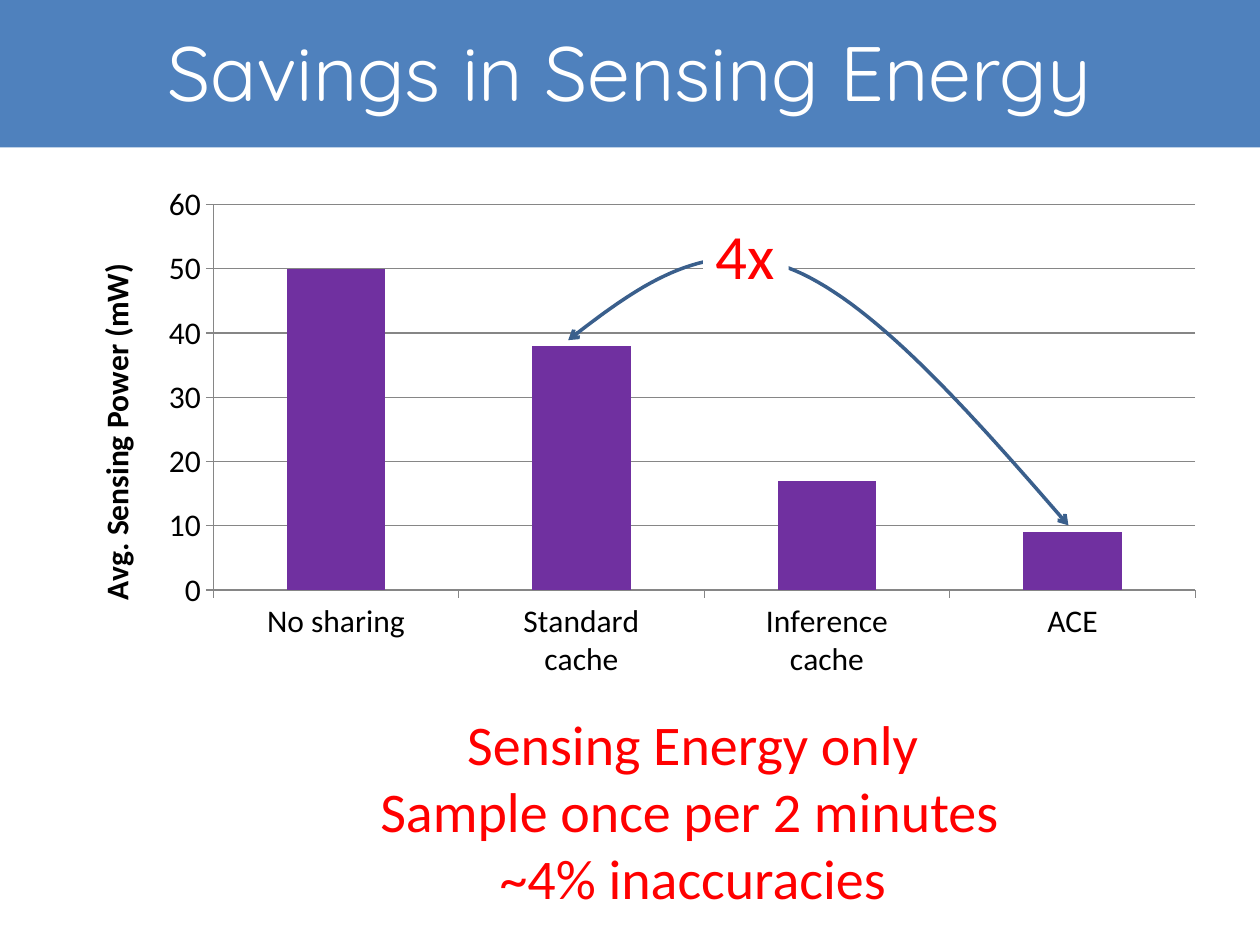
from dataclasses import dataclass

from lxml import etree
from pptx import Presentation
from pptx.chart.data import CategoryChartData
from pptx.dml.color import RGBColor
from pptx.enum.chart import XL_CHART_TYPE, XL_TICK_MARK
from pptx.enum.shapes import MSO_SHAPE
from pptx.enum.text import MSO_ANCHOR, PP_ALIGN
from pptx.oxml import parse_xml
from pptx.oxml.ns import nsdecls, qn
from pptx.util import Inches, Pt


@dataclass(frozen=True)
class Theme:
    """Colours, fonts and type sizes of the slide."""
    band: str = "4F81BD"
    bar: str = "7030A0"
    accent: str = "FF0000"
    arrow: str = "3A5F8C"
    grid: str = "868686"
    white: str = "FFFFFF"
    black: str = "000000"
    head_font: str = "Quicksand"
    body_font: str = "Calibri"
    title: int = 44
    callout: int = 36
    notes: int = 32
    chart: int = 18


def rgb(value):
    """Return a colour from its hex string."""
    return RGBColor.from_string(value)


def box(*lengths):
    """Return lengths given in inches."""
    return [Inches(v) for v in lengths]


def style_font(font, name, size, color, bold=False):
    """Set face, size, colour and weight of a font."""
    font.name, font.size, font.bold = name, Pt(size), bold
    font.color.rgb = rgb(color)


def put_text(tf, lines, font, size, color, aligns=(PP_ALIGN.CENTER,), wrap=False,
             anchor=MSO_ANCHOR.TOP):
    """Write lines into a text frame, cycling through the alignments."""
    tf.word_wrap, tf.vertical_anchor = wrap, anchor
    for i, line in enumerate(lines):
        p = tf.paragraphs[0] if i == 0 else tf.add_paragraph()
        p.alignment = aligns[i % len(aligns)]
        r = p.add_run()
        r.text = line
        style_font(r.font, font, size, color)


def bezier(p0, p1, p2, p3, steps=32):
    """Return points along a cubic curve, without its start."""
    points = []
    for i in range(1, steps + 1):
        t = i / steps
        weights = ((1 - t) ** 3, 3 * t * (1 - t) ** 2, 3 * t * t * (1 - t), t ** 3)
        points.append(tuple(sum(w * p[k] for w, p in zip(weights, (p0, p1, p2, p3)))
                            for k in (0, 1)))
    return points


class SlideBuilder:
    """Holds the theme and the current slide."""

    def __init__(self, prs, theme):
        """Add a title-only slide."""
        self.theme = theme
        self.s = prs.slides.add_slide(prs.slide_layouts[5])

    def rect(self, at, color):
        """Add a plain filled rectangle."""
        sp = self.s.shapes.add_shape(MSO_SHAPE.RECTANGLE, *box(*at))
        sp.shadow.inherit = False
        sp.fill.solid()
        sp.fill.fore_color.rgb = rgb(color)
        sp.line.fill.background()
        return sp

    def band(self, at):
        """Add the title band behind everything else."""
        el = self.rect(at, self.theme.band)._element
        el.getparent().insert(2, el)

    def title(self, text, at):
        """Place and fill the title placeholder."""
        th, sp = self.theme, self.s.shapes.title
        sp.left, sp.top, sp.width, sp.height = box(*at)
        put_text(sp.text_frame, [text], th.head_font, th.title, th.white,
                 wrap=True, anchor=MSO_ANCHOR.MIDDLE)

    def text(self, lines, at, aligns):
        """Add a text box of coloured lines."""
        th = self.theme
        sp = self.s.shapes.add_textbox(*box(*at))
        put_text(sp.text_frame, lines, th.body_font, th.notes, th.accent, aligns)

    def callout(self, text, at):
        """Add a label that masks what lies behind it."""
        th = self.theme
        put_text(self.rect(at, th.white).text_frame, [text], th.body_font,
                 th.callout, th.accent, (PP_ALIGN.LEFT,))

    def curve(self, start, *segments):
        """Add a smooth open line with an arrowhead at both ends."""
        points, pen = [], start
        for segment in segments:
            points += bezier(pen, *segment)
            pen = segment[-1]
        fb = self.s.shapes.build_freeform(*box(*start))
        fb.add_line_segments([box(*p) for p in points], close=False)
        sp = fb.convert_to_shape()
        sp.shadow.inherit = False
        sp.fill.background()
        sp.line.color.rgb, sp.line.width = rgb(self.theme.arrow), Pt(2)
        ln = sp.line._get_or_add_ln()
        for end in ("a:headEnd", "a:tailEnd"):
            etree.SubElement(ln, qn(end), type="arrow")

    def column_chart(self, categories, values, axis_title, at, plot):
        """Add a clustered column chart with a fixed plot area."""
        th = self.theme
        data = CategoryChartData()
        data.categories = categories
        data.add_series("Series 1", values)
        chart = self.s.shapes.add_chart(
            XL_CHART_TYPE.COLUMN_CLUSTERED, *box(*at), data).chart
        chart.has_legend = chart.has_title = False
        style_font(chart.font, th.body_font, th.chart, th.black)
        bars = chart.plots[0]
        bars.gap_width, bars.vary_by_categories = 150, False
        fill = bars.series[0].format.fill
        fill.solid()
        fill.fore_color.rgb = rgb(th.bar)
        axis = chart.value_axis
        axis.minimum_scale, axis.maximum_scale, axis.major_unit = 0, 60, 10
        axis.has_major_gridlines = True
        put_text(axis.axis_title.text_frame, [axis_title], th.body_font, th.chart, th.black)
        axis.axis_title.text_frame.paragraphs[0].runs[0].font.bold = True
        for ax in (axis, chart.category_axis):
            ax.major_tick_mark = XL_TICK_MARK.OUTSIDE
            ax.minor_tick_mark = XL_TICK_MARK.NONE
        for part in (axis, chart.category_axis, axis.major_gridlines):
            part.format.line.color.rgb = rgb(th.grid)
            part.format.line.width = Pt(0.75)
        self.plot_layout(chart, plot)

    def plot_layout(self, chart, plot):
        """Fix the inner plot area as fractions of the chart."""
        area = chart.plots[0]._element.getparent()
        for old in area.findall(qn("c:layout")):
            area.remove(old)
        modes = "".join(f'<c:{k}Mode val="edge"/>' for k in "xy")
        sizes = "".join(f'<c:{k} val="{v}"/>' for k, v in zip("xywh", plot))
        area.insert(0, parse_xml(
            f'<c:layout {nsdecls("c")}><c:manualLayout><c:layoutTarget val="inner"/>'
            f'{modes}{sizes}</c:manualLayout></c:layout>'))


def main():
    """Build and save the slide."""
    prs = Presentation()
    prs.slide_width, prs.slide_height = box(10, 7.5)
    b = SlideBuilder(prs, Theme())
    b.band((0, -0.08, 10, 1.25))
    b.title("Savings in Sensing Energy", (0.5, -0.17, 9, 1.47))
    b.column_chart(["No sharing", "Standard\ncache", "Inference\ncache", "ACE"],
                   [50, 38, 17, 9], "Avg. Sensing Power (mW)",
                   (0.5, 1.42, 9.17, 4.08), (0.13, 0.05, 0.85, 0.75))
    b.text(["Sensing Energy only", "Sample once per 2 minutes", "~4% inaccuracies"],
           (2.92, 5.58, 5.16, 1.72), (PP_ALIGN.CENTER, PP_ALIGN.LEFT))
    b.curve((4.51, 2.7),
            ((5.04, 2.29), (5.58, 1.88), (6.24, 2.12)),
            ((6.9, 2.36), (7.69, 3.26), (8.48, 4.17)))
    b.callout("4x", (5.58, 1.67, 0.68, 0.71))
    prs.save("out.pptx")


if __name__ == "__main__":
    main()
